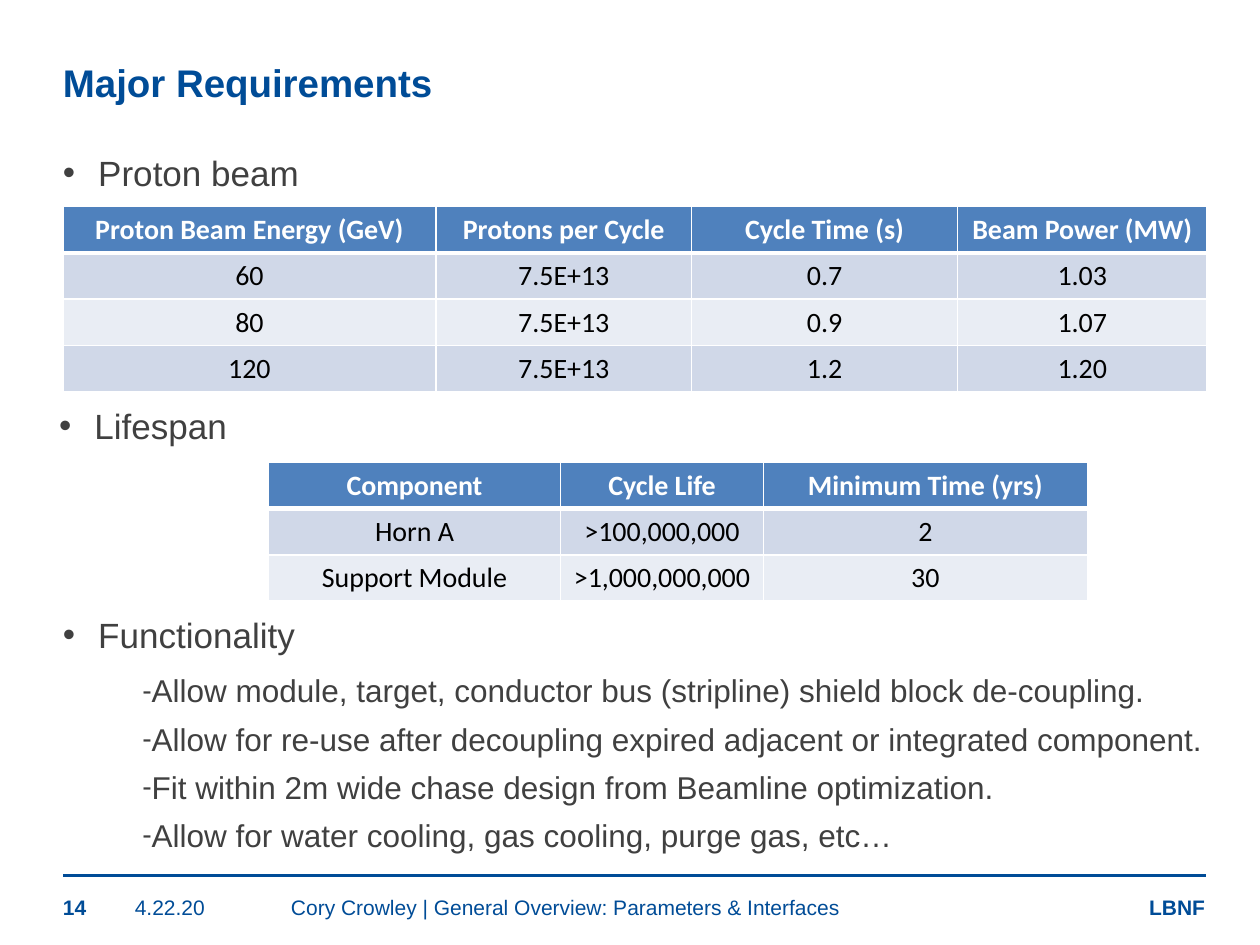
from dataclasses import dataclass
from lxml.etree import SubElement as Sub
from pptx import Presentation
from pptx.dml.color import RGBColor as Rgb
from pptx.enum.shapes import MSO_CONNECTOR as Link
from pptx.enum.text import MSO_ANCHOR as Anchor, PP_ALIGN as Align
from pptx.oxml.ns import qn
from pptx.util import Inches, Pt

COLS, ROWS = 100, 75
WIDE, TALL = Inches(10), Inches(7.5)
LEFT, SPAN = 5, 90.7
FOOT, DEEP = 71, 2
LINE = 3.67
HUES = {
    "blue": "004C97",
    "gray": "404040",
    "head": "4F81BD",
    "odd": "D0D8E8",
    "even": "E9EDF4",
    "white": "FFFFFF",
    "black": "000000",
}


@dataclass
class Area:
    col: float
    row: float
    wide: float
    tall: float

    def place(self) -> tuple[int, int, int, int]:
        return across(self.col), down(self.row), across(self.wide), down(self.tall)


@dataclass
class Label:
    text: str
    area: Area
    size: int = 12
    bold: bool = False
    low: bool = True


@dataclass
class Topic:
    area: Area
    head: str
    points: tuple[str, ...] = ()


@dataclass
class Grid:
    col: float
    row: float
    wides: tuple[float, ...]
    data: tuple[tuple[str, ...], ...]


def across(cols: float) -> int:
    return round(WIDE * cols / COLS)


def down(rows: float) -> int:
    return round(TALL * rows / ROWS)


def style(para, size: int, hue: str, bold: bool = False, face: str = "Arial") -> None:
    for run in para.runs:
        font = run.font
        font.name, font.size, font.bold = face, Pt(size), bold
        font.color.rgb = Rgb.from_string(HUES[hue])


def add_box(slide, area: Area, pad: float = 0):
    frame = slide.shapes.add_textbox(*area.place()).text_frame
    frame.word_wrap = True
    frame.margin_left = frame.margin_right = 0
    frame.margin_top = frame.margin_bottom = down(pad)
    return frame


def add_label(slide, label: Label) -> None:
    frame = add_box(slide, label.area)
    frame.vertical_anchor = Anchor.BOTTOM if label.low else Anchor.TOP
    frame.text = label.text
    style(frame.paragraphs[0], label.size, "blue", label.bold)


def set_mark(para, mark: str, left: float, shift: float, share: int) -> None:
    props = para._p.get_or_add_pPr()
    props.set("marL", str(across(left)))
    props.set("indent", str(across(shift)))
    Sub(props, qn("a:buSzPct"), val=str(share * 1000))
    Sub(props, qn("a:buFont"), typeface="Arial")
    Sub(props, qn("a:buChar"), char=mark)


def add_topic(slide, topic: Topic) -> None:
    frame = add_box(slide, topic.area, 0.5)
    head = frame.paragraphs[0]
    head.text = topic.head
    set_mark(head, "•", 2.8, -2.8, 100)
    head.space_after = Pt(6)
    style(head, 20, "gray")
    for point in topic.points:
        para = frame.add_paragraph()
        para.text, para.level = point, 1
        set_mark(para, "-", 3.5, 2.8, 90)
        para.space_before = para.space_after = Pt(3)
        style(para, 18, "gray")


def add_edge(cell, side: str, width: float) -> None:
    props = cell._tc.get_or_add_tcPr()
    edge = Sub(props, qn(f"a:ln{side}"), w=str(Pt(width)))
    Sub(Sub(edge, qn("a:solidFill")), qn("a:srgbClr"), val=HUES["white"])


def add_grid(slide, grid: Grid) -> None:
    count = len(grid.data)
    area = Area(grid.col, grid.row, sum(grid.wides), LINE * count)
    table = slide.shapes.add_table(count, len(grid.wides), *area.place()).table
    for col, wide in zip(table.columns, grid.wides):
        col.width = across(wide)
    for r, texts in enumerate(grid.data):
        table.rows[r].height = down(LINE)
        top = r == 0
        fill = "head" if top else "odd" if r % 2 else "even"
        for c, text in enumerate(texts):
            cell = table.cell(r, c)
            for side in "LRTB":
                thick = (top and side == "B") or (r == 1 and side == "T")
                add_edge(cell, side, 3 if thick else 1)
            cell.fill.solid()
            cell.fill.fore_color.rgb = Rgb.from_string(HUES[fill])
            cell.text = text
            para = cell.text_frame.paragraphs[0]
            para.alignment = Align.CENTER
            style(para, 16, "white" if top else "black", top, "Calibri")


def add_rule(slide, row: float) -> None:
    x, y = across(LEFT), down(row)
    rule = slide.shapes.add_connector(Link.STRAIGHT, x, y, x + across(SPAN), y)
    rule.line.color.rgb = Rgb.from_string(HUES["blue"])
    rule.line.width = Pt(2)
    Sub(rule._element.spPr, qn("a:effectLst"))


LABELS = (
    Label("LBNF", Area(91.2, FOOT, 4.6, DEEP), bold=True),
    Label("Major Requirements", Area(LEFT, 4.7, SPAN, 6.2), 22, True, False),
    Label("14", Area(LEFT, FOOT, 5.7, DEEP), bold=True),
    Label("4.22.20", Area(10.7, FOOT, 12.4, DEEP)),
    Label("Cory Crowley | General Overview: Parameters & Interfaces",
          Area(23.1, FOOT, 61.4, DEEP)),
)
TOPICS = (
    Topic(Area(LEFT, 11.5, SPAN, 4.5), "Proton beam"),
    Topic(Area(4.7, 31.6, SPAN, 4.5), "Lifespan"),
    Topic(Area(LEFT, 48.2, SPAN, 4.5), "Functionality", (
        "Allow module, target, conductor bus (stripline) shield block de-coupling.",
        "Allow for re-use after decoupling expired adjacent or integrated component.",
        "Fit within 2m wide chase design from Beamline optimization.",
        "Allow for water cooling, gas cooling, purge gas, etc…",
    )),
)
GRIDS = (
    Grid(LEFT, 16.4, (29.6, 20.3, 21.1, 19.8), (
        ("Proton Beam Energy (GeV)", "Protons per Cycle", "Cycle Time (s)", "Beam Power (MW)"),
        ("60", "7.5E+13", "0.7", "1.03"),
        ("80", "7.5E+13", "0.9", "1.07"),
        ("120", "7.5E+13", "1.2", "1.20"),
    )),
    Grid(21.3, 36.7, (23.2, 16.1, 25.7), (
        ("Component", "Cycle Life", "Minimum Time (yrs)"),
        ("Horn A", ">100,000,000", "2"),
        ("Support Module", ">1,000,000,000", "30"),
    )),
)


def main() -> None:
    deck = Presentation()
    deck.slide_width, deck.slide_height = WIDE, TALL
    slide = deck.slides.add_slide(deck.slide_layouts[6])
    add_rule(slide, 69.5)
    for label in LABELS:
        add_label(slide, label)
    for topic in TOPICS:
        add_topic(slide, topic)
    for grid in GRIDS:
        add_grid(slide, grid)
    deck.save("out.pptx")


if __name__ == "__main__":
    main()
